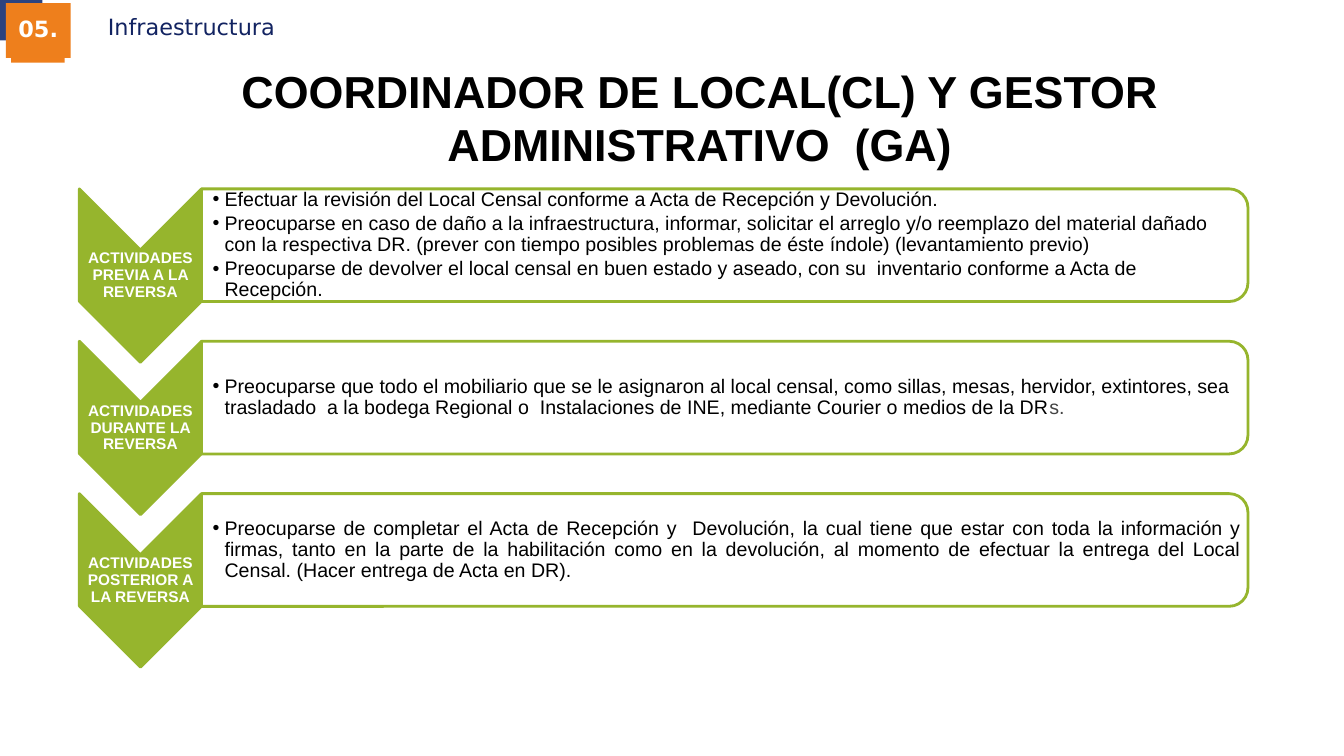
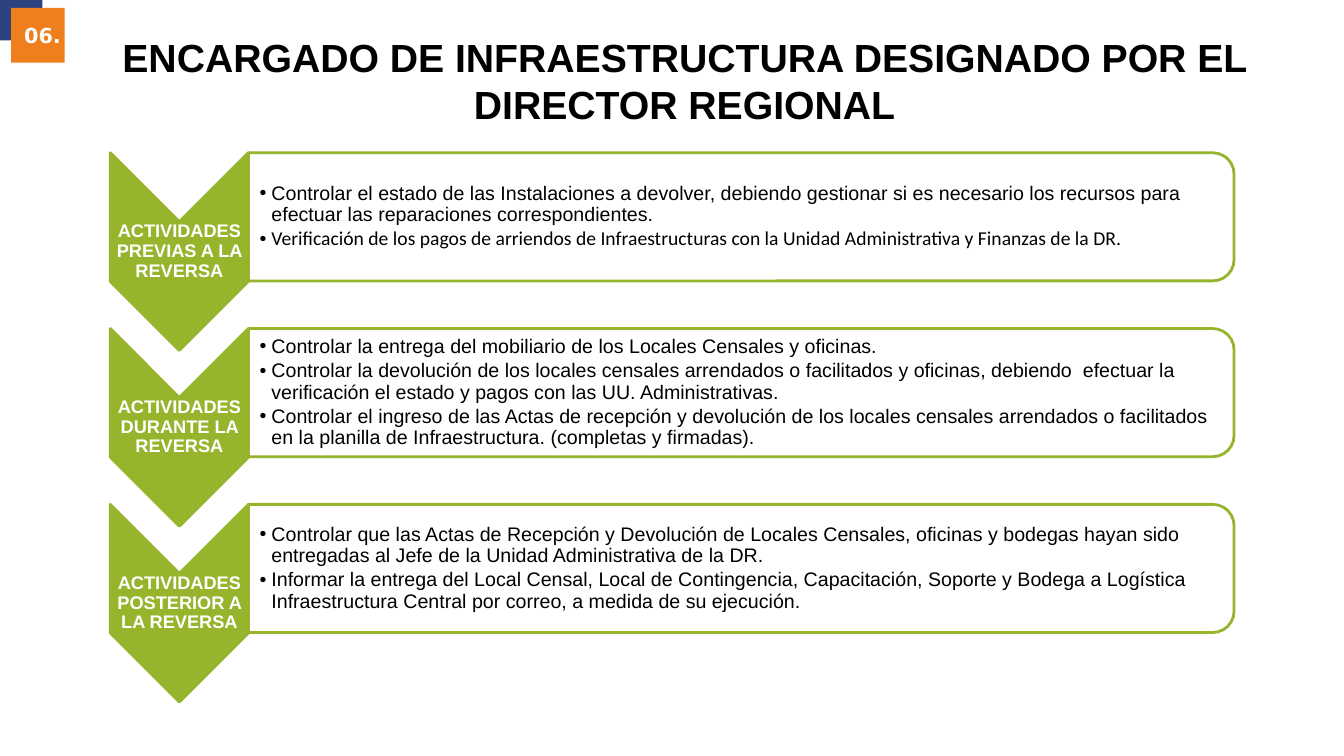
import pptx
import pptx.dml.color
import pptx.enum.shapes
import pptx.enum.text
import pptx.oxml
import pptx.oxml.ns
import pptx.util
from lxml import etree

Cm = pptx.util.Cm
Pt = pptx.util.Pt
qn = pptx.oxml.ns.qn
SHAPE = pptx.enum.shapes.MSO_SHAPE
ALIGN = pptx.enum.text.PP_ALIGN
ANCHOR = pptx.enum.text.MSO_ANCHOR

NAVY, ORANGE, BADGE = "2C437F", "EF7F1C", "EE7F1C"
GREEN, WHITE, BLACK = "96B52D", "FFFFFF", "000000"

FRAME = {
    "word_wrap": True,
    "auto_size": pptx.enum.text.MSO_AUTO_SIZE.NONE,
    "vertical_anchor": ANCHOR.MIDDLE,
}
PARA = {"space_before": Pt(0), "space_after": Pt(0), "line_spacing": 0.9}
TITLE = {"name": "Arial", "bold": True, "colour": BLACK}
LABEL = {"name": "Arial", "bold": True, "colour": WHITE}
LIST = {"name": "Arial", "size": Pt(14), "bold": False, "colour": BLACK}
NUMBER = {"name": "DejaVu Sans", "bold": True, "colour": WHITE}
SECTION = {"name": "DejaVu Sans", "size": Pt(16), "bold": False, "colour": "122361"}


def colour(code):
    return pptx.dml.color.RGBColor.from_string(code)


def apply(target, values):
    for name, value in values.items():
        if name == "colour":
            target.color.rgb = colour(value)
        else:
            setattr(target, name, value)


def place(box, left, top, width, height):
    apply(box, {"left": Cm(left), "top": Cm(top), "width": Cm(width), "height": Cm(height)})


def set_insets(frame, left, top, right, bottom):
    apply(frame, {"margin_left": Cm(left), "margin_top": Cm(top),
                  "margin_right": Cm(right), "margin_bottom": Cm(bottom)})


def set_bullet(para, bullet):
    properties = para._p.get_or_add_pPr()
    hanging = Cm(0.3) if bullet else 0
    properties.set("marL", str(hanging))
    properties.set("indent", str(-hanging))
    if not bullet:
        etree.SubElement(properties, qn("a:buNone"))
        return
    tint = etree.SubElement(properties, qn("a:buClr"))
    etree.SubElement(tint, qn("a:srgbClr"), val=BLACK)
    etree.SubElement(properties, qn("a:buFont"), typeface="Arial")
    etree.SubElement(properties, qn("a:buChar"), char="•")


def write(box, paragraphs, font, insets, para_format=None, bullet=False):
    frame = box.text_frame
    apply(frame, FRAME)
    set_insets(frame, *insets)
    for index, spans in enumerate(paragraphs):
        para = frame.add_paragraph() if index else frame.paragraphs[0]
        set_bullet(para, bullet)
        apply(para, PARA | (para_format or {}))
        for text, changes in spans:
            span = para.add_run()
            span.text = text
            apply(span.font, font | changes)


def plain(*texts):
    return [[(text, {})] for text in texts]


def add_block(page, kind, area, fill, line=None):
    block = page.shapes.add_shape(kind, *map(Cm, area))
    block.shadow.inherit = False
    block.fill.solid()
    block.fill.fore_color.rgb = colour(fill)
    if line:
        block.line.color.rgb = colour(line)
        block.line.width = Pt(2)
    else:
        block.line.fill.background()
    return block


def add_turned_block(page, kind, left, top, width, height, fill):
    shift = (width - height) / 2
    area = (left + shift, top - shift, height, width)
    block = add_block(page, kind, area, fill, GREEN)
    block.rotation = 90
    return block


def bring_forward(box):
    box.element.getparent().append(box.element)


def add_corner(page):
    tree = page.slide_layout.placeholders[0].element.getparent()
    squares = [((0, 0, 1.07, 1.02), NAVY), ((0.28, 0.2, 1.35, 1.38), ORANGE)]
    for number, (area, fill) in enumerate(squares, 20):
        square = add_block(page, SHAPE.RECTANGLE, area, fill)
        square.element.nvSpPr.cNvPr.set("id", str(number))
        tree.append(square.element)


def add_title(page, text, area, size):
    title = page.shapes.title
    place(title, *area)
    write(title, plain(text), TITLE | {"size": Pt(size)}, (0.25, 0.13, 0.25, 0.13),
          {"alignment": ALIGN.CENTER, "line_spacing": 1.0})


def add_number(page, text, area, size, left_inset, fill=None):
    badge = page.placeholders[4]
    place(badge, *area)
    if fill:
        badge.fill.solid()
        badge.fill.fore_color.rgb = colour(fill)
    write(badge, plain(text), NUMBER | {"size": Pt(size)},
          (left_inset, 0.13, 0.25, 0.13), {"alignment": ALIGN.CENTER})


def add_section(page, text):
    box = page.shapes.add_textbox(Cm(2.72), Cm(0.2), Cm(29.6), Cm(1.37))
    write(box, plain(text), SECTION, (0, 0.13, 0, 0.13),
          {"line_spacing": 1.0})
    box.text_frame.vertical_anchor = ANCHOR.TOP


def add_stage(page, index, grid, label, paragraphs, alignment=ALIGN.LEFT):
    left, top = grid["left"], grid["top"] + index * grid["pitch"]
    head_width, head_height = grid["head"]
    panel_width, panel_height = grid["panel"]
    panel_left = left + head_width
    inset = 0.14

    add_turned_block(page, SHAPE.CHEVRON, left, top, head_width, head_height, GREEN)
    caption = page.shapes.add_textbox(Cm(left), Cm(top + head_width / 2),
                                      Cm(head_width), Cm(head_height - head_width))
    write(caption, plain(label), LABEL | {"size": Pt(grid["size"])},
          (0.02, 0.02, 0.02, 0.02), {"alignment": ALIGN.CENTER})

    panel = add_turned_block(page, SHAPE.ROUND_2_SAME_RECTANGLE, panel_left, top,
                             panel_width, panel_height, WHITE)
    tint = panel.element.spPr.find(qn("a:solidFill")).find(qn("a:srgbClr"))
    etree.SubElement(tint, qn("a:alpha"), val="90000")

    tasks = page.placeholders[index + 1]
    place(tasks, panel_left, top + inset, panel_width - inset, panel_height - 2 * inset)
    write(tasks, paragraphs, LIST, (0.28, 0.02, 0.02, 0.02),
          {"alignment": alignment, "space_after": Pt(2.1)}, bullet=True)
    bring_forward(tasks)


def add_stages(page, grid, stages):
    for index, stage in enumerate(stages):
        add_stage(page, index, grid, *stage)


def build_coordinator(page):
    add_number(page, "05.", (0.15, 0.08, 1.63, 1.38), 16, 0.25, BADGE)
    grid = {"left": 2, "top": 4.76, "pitch": 3.84, "head": (3.08, 4.37),
            "panel": (26.37, 2.84), "size": 11}
    add_stages(page, grid, [
        ("ACTIVIDADES PREVIA A LA REVERSA", plain(
            "Efectuar la revisión del Local Censal conforme a Acta de Recepción y Devolución.",
            "Preocuparse en caso de daño a la infraestructura, informar, solicitar el arreglo "
            "y/o reemplazo del material dañado con la respectiva DR. (prever con tiempo "
            "posibles problemas de éste índole) (levantamiento previo)",
            "Preocuparse de devolver el local censal en buen estado y aseado, con su  "
            "inventario conforme a Acta de Recepción.")),
        ("ACTIVIDADES DURANTE LA REVERSA", [[
            ("Preocuparse que todo el mobiliario que se le asignaron al local censal, como "
             "sillas, mesas, hervidor, extintores, sea trasladado  a la bodega Regional o  "
             "Instalaciones de INE, mediante Courier o medios de la DR", {}),
            ("s.", {"colour": "444444"})]]),
        ("ACTIVIDADES POSTERIOR A LA REVERSA", plain(
            "Preocuparse de completar el Acta de Recepción y  Devolución, la cual tiene que "
            "estar con toda la información y firmas, tanto en la parte de la habilitación "
            "como en la devolución, al momento de efectuar la entrega del Local Censal. "
            "(Hacer entrega de Acta en DR)."), ALIGN.JUSTIFY),
    ])
    add_title(page, "COORDINADOR DE LOCAL(CL) Y GESTOR ADMINISTRATIVO  (GA)",
              (2.34, 1.45, 30.6, 3), 32)
    add_section(page, "Infraestructura")


def build_manager(page):
    add_number(page, "06.", (0.18, 0.23, 1.63, 1.38), 14.8, 0.4)
    grid = {"left": 2.78, "top": 3.85, "pitch": 4.43, "head": (3.48, 4.98),
            "panel": (24.84, 3.23), "size": 13}
    add_stages(page, grid, [
        ("ACTIVIDADES PREVIAS A LA REVERSA", [
            [("Controlar el estado de las Instalaciones a devolver, debiendo gestionar si es "
              "necesario los recursos para efectuar las reparaciones correspondientes.", {})],
            [("Verificación de los pagos de arriendos de Infraestructuras con la Unidad "
              "Administrativa y Finanzas de la DR.", {"name": "Calibri"})]]),
        ("ACTIVIDADES DURANTE LA REVERSA", plain(
            "Controlar la entrega del mobiliario de los Locales Censales y oficinas.",
            "Controlar la devolución de los locales censales arrendados o facilitados y "
            "oficinas, debiendo  efectuar la verificación el estado y pagos con las UU. "
            "Administrativas.",
            "Controlar el ingreso de las Actas de recepción y devolución de los locales "
            "censales arrendados o facilitados en la planilla de Infraestructura. "
            "(completas y firmadas).")),
        ("ACTIVIDADES POSTERIOR A LA REVERSA", plain(
            "Controlar que las Actas de Recepción y Devolución de Locales Censales, oficinas "
            "y bodegas hayan sido entregadas al Jefe de la Unidad Administrativa de la DR.",
            "Informar la entrega del Local Censal, Local de Contingencia, Capacitación, "
            "Soporte y Bodega a Logística Infraestructura Central por correo, a medida de "
            "su ejecución.")),
    ])
    add_title(page, "ENCARGADO DE INFRAESTRUCTURA DESIGNADO POR EL DIRECTOR REGIONAL",
              (1.78, 0.71, 30.94, 2.64), 28)


def main():
    deck = pptx.Presentation()
    deck.slide_width, deck.slide_height = Cm(33.87), Cm(19.05)
    layout = deck.slide_layouts.get_by_name("Comparison")
    pages = [deck.slides.add_slide(layout) for _ in range(2)]
    add_corner(pages[0])
    build_coordinator(pages[0])
    build_manager(pages[1])
    deck.save("out.pptx")


if __name__ == "__main__":
    main()
